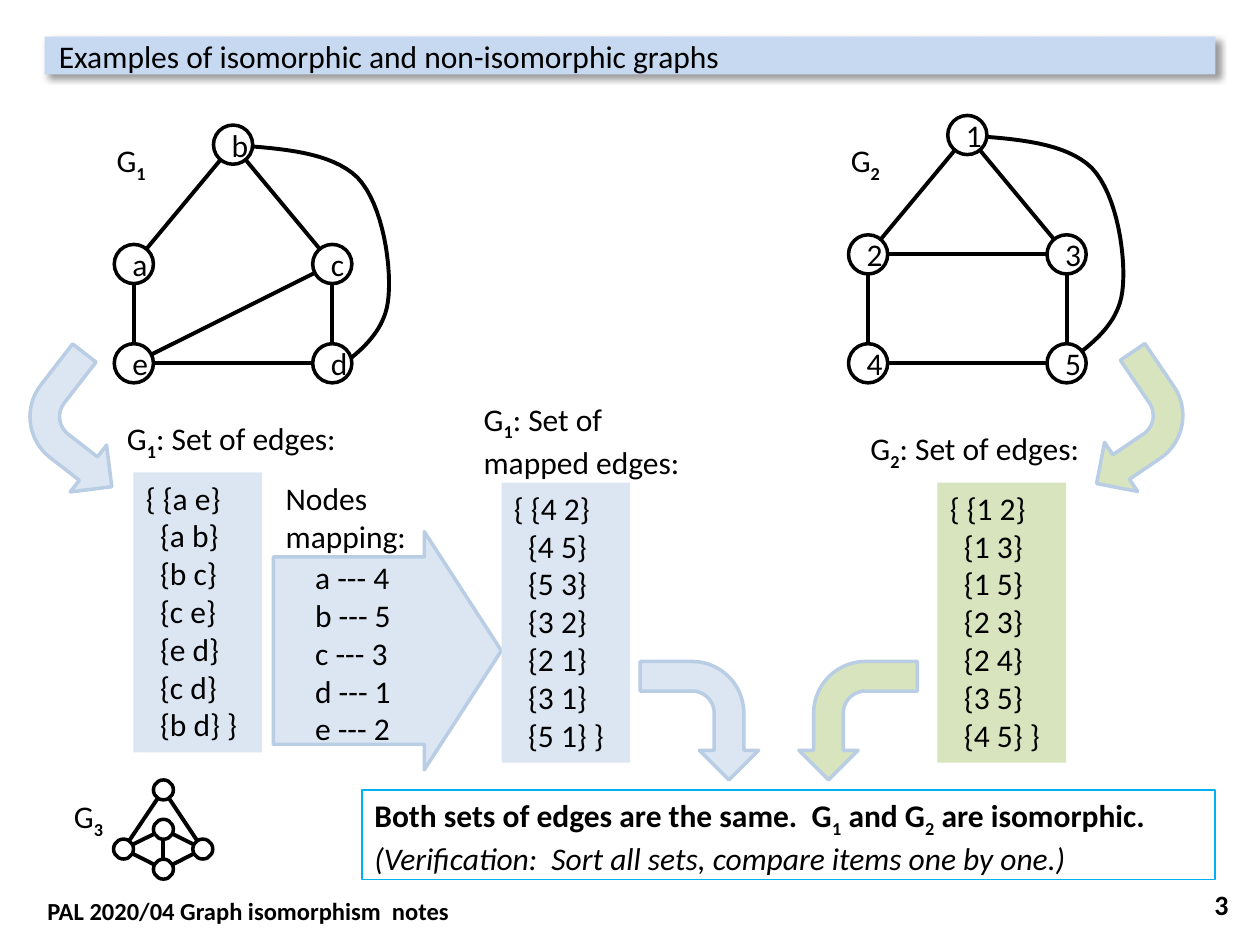
from pptx import Presentation
from pptx import util as u
from pptx.dml import color
from pptx.enum import shapes, text
from pptx.oxml import ns
from lxml import etree

BLACK, WHITE = "000000", "FFFFFF"
BLUE, GREEN, RIM = "DCE6F2", "D7E4BD", "B9CDE5"
INDENT = 8.1
MAPPING = {"a": "4", "b": "5", "c": "3", "d": "1", "e": "2"}
EDGES_1 = "ae ab bc ce ed cd bd".split()
EDGES_2 = "12 13 15 23 24 35 45".split()
ARC = [(0, 0), (28, 2), (56, 4), (71, 18.5), (86, 34),
       (91, 71), (88.5, 89.5), (86, 108), (71, 119.5), (56.5, 130)]


def rgb(value):
    """Turn a hex string into a colour."""
    return color.RGBColor.from_string(value)


def apply(target, **values):
    """Set each named attribute on the target."""
    for name, value in values.items():
        setattr(target, name, value)


def paint(shape, fill=None, line=None, width=2):
    """Give a shape its fill and outline, without a shadow."""
    shape.shadow.inherit = False
    if fill:
        shape.fill.solid()
        shape.fill.fore_color.rgb = rgb(fill)
    else:
        shape.fill.background()
    if line:
        shape.line.color.rgb = rgb(line)
        shape.line.width = u.Pt(width)
    else:
        shape.line.fill.background()


def add_spans(para, line, **style):
    """Fill a paragraph, setting the letter after each underscore as a subscript."""
    first, *rest = line.split("_")
    pieces = [(first, False)]
    for part in rest:
        pieces += [(part[0], True), (part[1:], False)]
    for words, low in pieces:
        if words:
            span = para.add_run()
            span.text = words
            values = {"name": "Calibri", "size": u.Pt(18), "bold": low, **style}
            apply(span.font, **values)
            span.font.color.rgb = rgb(BLACK)
            if low:
                span.font._element.set("baseline", "-25000")


def write(shape, lines, align="LEFT", anchor="TOP", margins=None, grow=True, **style):
    """Write one paragraph per line into a shape."""
    frame = shape.text_frame
    fit = text.MSO_AUTO_SIZE.SHAPE_TO_FIT_TEXT if grow else text.MSO_AUTO_SIZE.NONE
    apply(frame, word_wrap=True, auto_size=fit,
          vertical_anchor=getattr(text.MSO_ANCHOR, anchor))
    for side, size in zip(("left", "top", "right", "bottom"), margins or ()):
        setattr(frame, f"margin_{side}", u.Pt(size))
    for index, line in enumerate(lines):
        para = frame.add_paragraph() if index else frame.paragraphs[0]
        para.alignment = getattr(text.PP_ALIGN, align)
        add_spans(para, line, **style)
    return frame


def add_shape(page, kind, box, **look):
    """Add a painted preset shape."""
    shape = page.shapes.add_shape(getattr(shapes.MSO_SHAPE, kind), *map(u.Pt, box))
    paint(shape, **look)
    return shape


def add_label(page, box, lines, **style):
    """Add a text box."""
    return write(page.shapes.add_textbox(*map(u.Pt, box)), lines, **style)


def draw_title(page, box):
    """Draw the title bar with its soft shadow."""
    bar = add_shape(page, "RECTANGLE", box, fill="C6D9F1")
    write(bar, ["Examples of isomorphic and non-isomorphic graphs"],
          anchor="MIDDLE", margins=(INDENT, 0, 0, 0))
    effects = bar._element.spPr.find(ns.qn("a:effectLst"))
    shadow = etree.SubElement(effects, ns.qn("a:outerShdw"), blurRad=str(u.Pt(4)),
                              dist=str(u.Pt(3)), dir="2700000", algn="tl", rotWithShape="0")
    tint = etree.SubElement(shadow, ns.qn("a:srgbClr"), val=BLACK)
    etree.SubElement(tint, ns.qn("a:alpha"), val="40000")


def draw_graph(page, left, top, spots, edges, radius, named=True):
    """Draw straight edges between node centres, then the nodes."""
    centres = {name: (left + x, top + y) for name, (x, y) in spots.items()}
    for start, end in edges.split():
        ends = map(u.Pt, (*centres[start], *centres[end]))
        edge = page.shapes.add_connector(shapes.MSO_CONNECTOR.STRAIGHT, *ends)
        edge.line.color.rgb = rgb(BLACK)
        edge.line.width = u.Pt(2.25)
        etree.SubElement(edge._element.spPr, ns.qn("a:effectLst"))
    for name, (x, y) in centres.items():
        box = (x - radius, y - radius, 2 * radius, 2 * radius)
        node = add_shape(page, "OVAL", box, fill=WHITE, line=BLACK)
        if named:
            write(node, [name], align="CENTER", anchor="MIDDLE", grow=False)


def draw_arc(page, left, top, steps=16):
    """Draw the curved edge through its three Bezier pieces."""
    points = []
    for first in range(0, 9, 3):
        for step in range(steps + 1):
            t = step / steps
            weights = ((1 - t) ** 3, 3 * t * (1 - t) ** 2, 3 * t * t * (1 - t), t ** 3)
            points.append(tuple(
                u.Pt(base + sum(w * p[axis] for w, p in zip(weights, ARC[first:first + 4])))
                for axis, base in enumerate((left, top))))
    builder = page.shapes.build_freeform(*points[0], scale=1.0)
    builder.add_line_segments(points[1:], close=False)
    paint(builder.convert_to_shape(), line=BLACK, width=2.25)


def draw_house(page, left, top, label, label_top, names, edges, floor):
    """Draw a five-node graph whose roof and last node share a curved edge."""
    places = [(67.9, 11.2), (11.2, 79.4), (124.6, 79.4), (11.2, floor), (124.6, floor)]
    draw_arc(page, left + 67.9, top + 11.4)
    draw_graph(page, left, top, dict(zip(names, places)), edges, 11.2)
    add_label(page, (left - 5.8, label_top, 39.6, 28.8), [label])


def draw_small_graph(page, left, top):
    """Draw the small third graph and its label."""
    spots = {"t": (28.1, 5.7), "l": (5.3, 39.5), "m": (28.1, 28.2),
             "b": (28.1, 51), "r": (50.6, 39.5)}
    draw_graph(page, left, top, spots, "ml bl bm mr br rt lt", 5.7, named=False)
    add_label(page, (left - 23, top + 11.5, 28, 21.6), ["G_3"],
              anchor="MIDDLE", margins=(0, 0, 2.9, 0))


def draw_edge_set(page, left, top, heading, offset, edges, fill):
    """Draw a filled list of edges below its heading."""
    lines = [f"{{{start} {end}}}" for start, end in edges]
    lines[0], lines[-1] = "{ " + lines[0], lines[-1] + " }"
    panel = add_shape(page, "RECTANGLE", (left, top, 73.6, 160), fill=fill)
    for para in write(panel, lines).paragraphs[1:]:
        para._p.get_or_add_pPr().set("marL", str(u.Pt(INDENT)))
    height = 28.8 if len(heading) == 1 else 51
    add_label(page, (left + offset[0], top + offset[1], 153.4, height), heading)


def draw_mapping(page, left, top):
    """Draw the wide arrow that holds the node mapping."""
    arrow = add_shape(page, "RIGHT_ARROW", (left, top + 33.8, 130.3, 136.1), fill=BLUE, line=RIM)
    arrow.adjustments[0], arrow.adjustments[1] = 0.787, 0.338
    add_label(page, (left, top, 108, 51), ["Nodes mapping:"])
    add_label(page, (left + 16.8, top + 45.4, 62.6, 116.6),
              [f"{old} --- {new}" for old, new in MAPPING.items()])


def draw_bend(page, left, top, fill, turn, flip=None):
    """Draw a turned bent arrow."""
    arrow = add_shape(page, "BENT_ARROW", (left, top, 67.7, 67.7), fill=fill, line=RIM)
    arrow.rotation = turn
    if flip:
        arrow._element.spPr.xfrm.set(flip, "1")


def draw_verdict(page, box):
    """Draw the framed conclusion."""
    frame = write(add_shape(page, "RECTANGLE", box, line="00B0F0", width=0.75),
                  ["Both sets of edges are the same.  G_1 and G_2 are isomorphic."], bold=True)
    add_spans(frame.add_paragraph(), "(Verification:  Sort all sets, compare items one by one.)",
              italic=True)
    frame.paragraphs[1].alignment = text.PP_ALIGN.LEFT


def draw_footer(page, left, top):
    """Draw the footer and the page number."""
    add_label(page, (left + 521.3, top - 5.8, 167.8, 28.8), ["3"], align="RIGHT",
              anchor="MIDDLE", grow=False, size=u.Pt(16), bold=True)
    add_label(page, (left, top, 674.6, 24.5), ["PAL 2020/04 Graph isomorphism  notes"],
              size=u.Pt(14), bold=True)


def main():
    """Build the slide."""
    deck = Presentation()
    apply(deck, slide_width=u.Pt(720), slide_height=u.Pt(540))
    page = deck.slides.add_slide(deck.slide_layouts[6])
    draw_title(page, (25.5, 20.9, 669, 21.6))
    draw_house(page, 65.3, 71.5, "G_1", 77, "baced", "ba bc ae cd ec ed", 136.1)
    draw_house(page, 484.9, 66, "G_2", 77, "12345", "12 13 23 24 35 45", 141.6)
    draw_mapping(page, 156.2, 270)
    mapped = [edge.translate(str.maketrans(MAPPING)) for edge in EDGES_1]
    draw_edge_set(page, 76.3, 270, ["G_1: Set of edges:"], (-10.8, -33.9), EDGES_1, BLUE)
    draw_edge_set(page, 286.6, 275.8, ["G_1: Set of", "mapped edges:"], (-17.3, -51), mapped, BLUE)
    draw_edge_set(page, 535.7, 275.8, ["G_2: Set of edges:"], (-45.4, -33.9), EDGES_2, GREEN)
    draw_bend(page, 365.8, 378, BLUE, 90)
    draw_bend(page, 456.5, 378, GREEN, 270, "flipH")
    draw_bend(page, 611.3, 209.5, GREEN, 145.9)
    draw_bend(page, 13.7, 210.2, BLUE, 37.8, "flipV")
    draw_verdict(page, (206.9, 451.5, 487.5, 51))
    draw_small_graph(page, 65.3, 445.7)
    draw_footer(page, 20, 508.3)
    deck.save("out.pptx")


if __name__ == "__main__":
    main()
